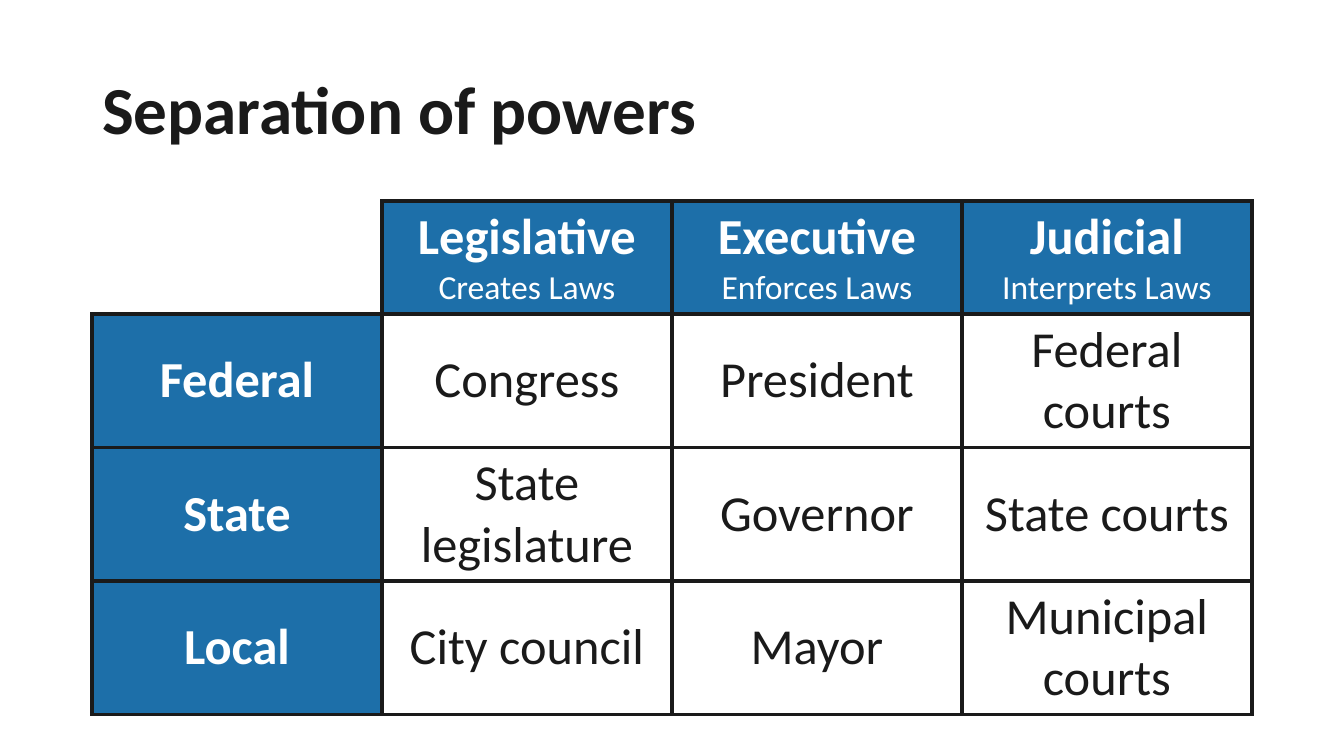
from lxml.etree import SubElement
from pptx import Presentation
from pptx.dml.color import RGBColor
from pptx.enum.text import MSO_ANCHOR, PP_ALIGN
from pptx.oxml.ns import qn
from pptx.util import Pt

PX = 914400 / 100.8
FONT = "Calibri"
INK, BLUE, WHITE = "1A1A1A", "1D6FA9", "FFFFFF"

BRANCHES = [
    ("Legislative", "Creates Laws"),
    ("Executive", "Enforces Laws"),
    ("Judicial", "Interprets Laws"),
]
LEVELS = [
    ("Federal", "Congress", "President", "Federal courts"),
    ("State", "State legislature", "Governor", "State courts"),
    ("Local", "City council", "Mayor", "Municipal courts"),
]
LEFT, TOP, COLUMN_WIDTH = 92, 201, 290
HEADER_HEIGHT, LEVEL_HEIGHT = 113, 133


def px(length):
    return round(length * PX)


def color(hex_string):
    return RGBColor.from_string(hex_string)


def write(paragraph, text, size=36, ink=INK, bold=False, align=PP_ALIGN.CENTER):
    paragraph.alignment = align
    run = paragraph.add_run()
    run.text = text
    run.font.name = FONT
    run.font.size = Pt(size)
    run.font.bold = bold
    run.font.color.rgb = color(ink)


def add_title(slide, text):
    title = slide.shapes.title
    title.left, title.top = px(LEFT), px(40)
    title.width, title.height = px(4 * COLUMN_WIDTH), px(146)
    title.text_frame.vertical_anchor = MSO_ANCHOR.MIDDLE
    heading = title.text_frame.paragraphs[0]
    heading.line_spacing = 0.9
    write(heading, text, size=48, bold=True, align=PP_ALIGN.LEFT)


def set_borders(cell, white_sides=""):
    """Draw dark 3 pt borders, but thin white ones on the sides named."""
    properties = cell._tc.get_or_add_tcPr()
    for position, side in enumerate("LRTB"):
        hidden = side in white_sides
        line = SubElement(properties, qn(f"a:ln{side}"), w=str(Pt(1 if hidden else 3)))
        fill = SubElement(line, qn("a:solidFill"))
        SubElement(fill, qn("a:srgbClr"), val=WHITE if hidden else INK)
        properties.insert(position, line)


def format_cell(cell, fill, white_sides=""):
    cell.vertical_anchor = MSO_ANCHOR.MIDDLE
    cell.fill.solid()
    cell.fill.fore_color.rgb = color(fill)
    set_borders(cell, white_sides)


def add_powers_table(slide):
    rows, columns = len(LEVELS) + 1, len(BRANCHES) + 1
    height = HEADER_HEIGHT + len(LEVELS) * LEVEL_HEIGHT
    powers = slide.shapes.add_table(
        rows, columns, px(LEFT), px(TOP), px(columns * COLUMN_WIDTH), px(height)
    ).table
    powers.first_row = powers.horz_banding = False
    for column in powers.columns:
        column.width = px(COLUMN_WIDTH)
    for index, row in enumerate(powers.rows):
        row.height = px(LEVEL_HEIGHT if index else HEADER_HEIGHT)

    format_cell(powers.cell(0, 0), WHITE, white_sides="LT")
    for column, (branch, role) in enumerate(BRANCHES, start=1):
        cell = powers.cell(0, column)
        format_cell(cell, BLUE)
        write(cell.text_frame.paragraphs[0], branch, ink=WHITE, bold=True)
        write(cell.text_frame.add_paragraph(), role, size=24, ink=WHITE)
    for row, level in enumerate(LEVELS, start=1):
        for column, text in enumerate(level):
            is_label = column == 0
            cell = powers.cell(row, column)
            format_cell(cell, BLUE if is_label else WHITE)
            write(cell.text_frame.paragraphs[0], text,
                  ink=WHITE if is_label else INK, bold=is_label)


def main():
    presentation = Presentation()
    presentation.slide_width, presentation.slide_height = px(1344), px(756)
    slide = presentation.slides.add_slide(presentation.slide_layouts[5])
    add_title(slide, "Separation of powers")
    add_powers_table(slide)
    presentation.save("out.pptx")


if __name__ == "__main__":
    main()
